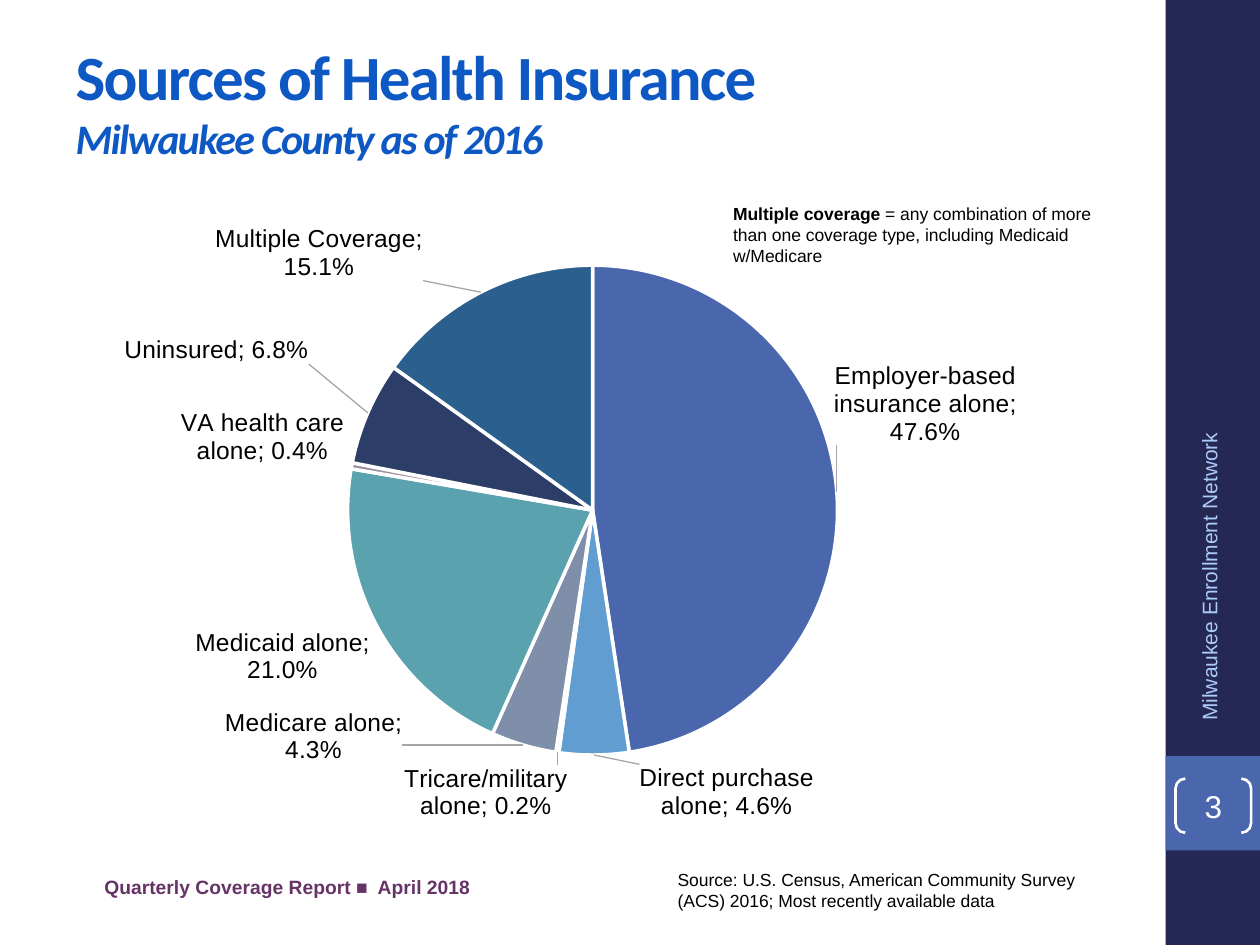
from copy import deepcopy
from lxml.etree import SubElement
from pptx import Presentation
from pptx.chart.data import CategoryChartData
from pptx.dml.color import RGBColor
from pptx.enum.chart import XL_CHART_TYPE, XL_LABEL_POSITION
from pptx.enum.shapes import MSO_SHAPE
from pptx.enum.text import MSO_ANCHOR, MSO_AUTO_SIZE, PP_ALIGN
from pptx.oxml import parse_xml
from pptx.oxml.ns import nsdecls, qn
from pptx.util import Inches, Pt

SOURCES = [
    ("Employer-based insurance alone", 0.476, "4A66AC", (-0.01, -0.137)),
    ("Direct purchase alone", 0.046, "629DD1", (0.127, 0.003)),
    ("Tricare/military alone", 0.002, "297FD5", (0.011, 0.008)),
    ("Medicare alone", 0.043, "7F8FA9", (-0.114, -0.068)),
    ("Medicaid alone", 0.21, "5AA2AE", None),
    ("VA health care alone", 0.004, "9D90A0", None),
    ("Uninsured", 0.068, "2C3D67", (-0.05, -0.072)),
    ("Multiple Coverage", 0.151, "2A5F8E", (-0.052, -0.008)),
]


def color(value):
    return RGBColor.from_string(value)


def manual_layout(**values):
    items = "".join(f'<c:{key} val="{value}"/>' for key, value in values.items())
    return parse_xml(
        f'<c:layout {nsdecls("c")}><c:manualLayout>{items}</c:manualLayout></c:layout>'
    )


class SlideBuilder:
    def __init__(self, slide, font="Arial"):
        self.slide = slide
        self.font = font

    def style(self, font, values):
        values = {"name": self.font, **values}
        font.color.rgb = color(values.pop("color", "000000"))
        for name, value in values.items():
            setattr(font, name, value)

    def set_text(self, shape, paragraphs, align=PP_ALIGN.LEFT, anchor=MSO_ANCHOR.TOP, inset=None):
        frame = shape.text_frame
        settings = {"word_wrap": True, "auto_size": MSO_AUTO_SIZE.NONE, "vertical_anchor": anchor}
        if inset is not None:
            sides = ("left", "top", "right", "bottom")
            settings.update({f"margin_{side}": Inches(inset) for side in sides})
        for name, value in settings.items():
            setattr(frame, name, value)
        for index, spans in enumerate(paragraphs):
            para = frame.add_paragraph() if index else frame.paragraphs[0]
            para.alignment = align
            for text, values in spans:
                span = para.add_run()
                span.text = text
                self.style(span.font, values)

    def title(self, place, paragraphs):
        title = self.slide.shapes.title
        for name, value in zip(("left", "top", "width", "height"), place):
            setattr(title, name, Inches(value))
        self.set_text(title, paragraphs, anchor=MSO_ANCHOR.MIDDLE)
        for para in title.text_frame.paragraphs:
            for span in para.runs:
                span.font._element.set("spc", "-100")

    def text(self, place, spans, rotation=0, **options):
        box = self.slide.shapes.add_textbox(*map(Inches, place))
        box.rotation = rotation
        self.set_text(box, [spans], **options)

    def shape(self, kind, place, fill=None, line=None):
        shape = self.slide.shapes.add_shape(kind, *map(Inches, place))
        shape.shadow.inherit = False
        if fill:
            shape.fill.solid()
            shape.fill.fore_color.rgb = color(fill)
        else:
            shape.fill.background()
        if line:
            shape.line.color.rgb = color(line)
            shape.line.width = Pt(1.5)
        else:
            shape.line.fill.background()
        return shape

    def pie(self, place, sources, plot_place):
        data = CategoryChartData(number_format="0.0%")
        data.categories = [name for name, *_ in sources]
        data.add_series("Series 1", [value for _, value, *_ in sources])
        chart = self.slide.shapes.add_chart(
            XL_CHART_TYPE.PIE, *map(Inches, place), data
        ).chart
        chart.has_legend = chart.has_title = False
        self.style(chart.font, {"size": Pt(10)})
        plot = chart.plots[0]
        plot.vary_by_categories = True
        area = chart.element.find(".//" + qn("c:plotArea"))
        for old in area.findall(qn("c:layout")):
            area.remove(old)
        x, y, width, height = plot_place
        area.insert(0, manual_layout(
            layoutTarget="inner", xMode="edge", yMode="edge", x=x, y=y, w=width, h=height
        ))
        series = plot.series[0]
        for index, (_, _, fill, _) in enumerate(sources):
            wedge = series.points[index].format
            wedge.fill.solid()
            wedge.fill.fore_color.rgb = color(fill)
            wedge.line.color.rgb = color("FFFFFF")
            wedge.line.width = Pt(2)
        self.pie_labels(series, sources)

    def pie_labels(self, series, sources):
        labels = series.data_labels
        settings = {
            "show_value": True, "show_category_name": True, "show_percentage": False,
            "number_format": "0.0%", "number_format_is_linked": False,
            "position": XL_LABEL_POSITION.OUTSIDE_END,
        }
        for name, value in settings.items():
            setattr(labels, name, value)
        self.style(labels.font, {"size": Pt(14)})
        group = series._element.find(qn("c:dLbls"))
        leader = group.find(qn("c:showLeaderLines"))
        if leader is None:
            leader = SubElement(group, qn("c:showLeaderLines"))
        leader.set("val", "1")
        separator = parse_xml(f'<c:separator {nsdecls("c")}>; </c:separator>')
        leader.addprevious(separator)
        leader.addnext(parse_xml(
            f'<c:leaderLines {nsdecls("c", "a")}><c:spPr><a:ln w="9525"><a:solidFill>'
            '<a:srgbClr val="A6A6A6"/></a:solidFill></a:ln></c:spPr></c:leaderLines>'
        ))
        shared = list(group)[:list(group).index(leader)]
        moved = [(index, source[3]) for index, source in enumerate(sources) if source[3]]
        for position, (index, (x, y)) in enumerate(moved):
            label = parse_xml(f'<c:dLbl {nsdecls("c")}><c:idx val="{index}"/></c:dLbl>')
            label.append(manual_layout(x=x, y=y))
            for item in shared:
                label.append(deepcopy(item))
            group.insert(position, label)


def main():
    deck = Presentation()
    deck.slide_width, deck.slide_height = Inches(10), Inches(7.5)
    page = SlideBuilder(deck.slides.add_slide(deck.slide_layouts[5]))
    small = {"size": Pt(10)}
    heading = {"name": "Calibri", "color": "0E58C4", "bold": True}

    page.shape(MSO_SHAPE.RECTANGLE, (9.25, 0, 0.75, 7.5), fill="242852")
    page.shape(MSO_SHAPE.RECTANGLE, (9.25, 6, 0.75, 0.75), fill="4A66AC")
    page.text((8.3, 4.43, 2.59, 0.4),
              [("Milwaukee Enrollment Network", {"size": Pt(12), "color": "ACCBF9"})],
              rotation=270, align=PP_ALIGN.RIGHT, anchor=MSO_ANCHOR.MIDDLE)
    number = page.shape(MSO_SHAPE.DOUBLE_BRACKET, (9.33, 6.18, 0.6, 0.43), line="FFFFFF")
    number.adjustments[0] = 0.18
    page.set_text(number, [[("3", {"size": Pt(18), "color": "FFFFFF"})]],
                  align=PP_ALIGN.CENTER, anchor=MSO_ANCHOR.MIDDLE, inset=0)
    page.title((0.5, 0.28, 8.08, 1.03), [
        [("Sources of Health Insurance", {**heading, "size": Pt(36)})],
        [("Milwaukee County as of 2016", {**heading, "size": Pt(24), "italic": True})],
    ])
    page.pie((0.6, 1.6, 8.29, 5.05), SOURCES, (0.26, 0.1, 0.47, 0.77))
    page.text((0.73, 6.84, 4.16, 0.4),
              [("Quarterly Coverage Report ■  April 2018",
                {"size": Pt(11), "color": "663366", "bold": True})],
              anchor=MSO_ANCHOR.MIDDLE)
    page.text((5.28, 6.85, 3.7, 0.44),
              [("Source: U.S. Census, American Community Survey (ACS) 2016; "
                "Most recently available data", small)])
    page.text((5.72, 1.56, 3.16, 0.61), [
        ("Multiple coverage ", {**small, "bold": True}),
        ("= any combination of more than one coverage type, "
         "including Medicaid w/Medicare", small),
    ])
    deck.save("out.pptx")


if __name__ == "__main__":
    main()
